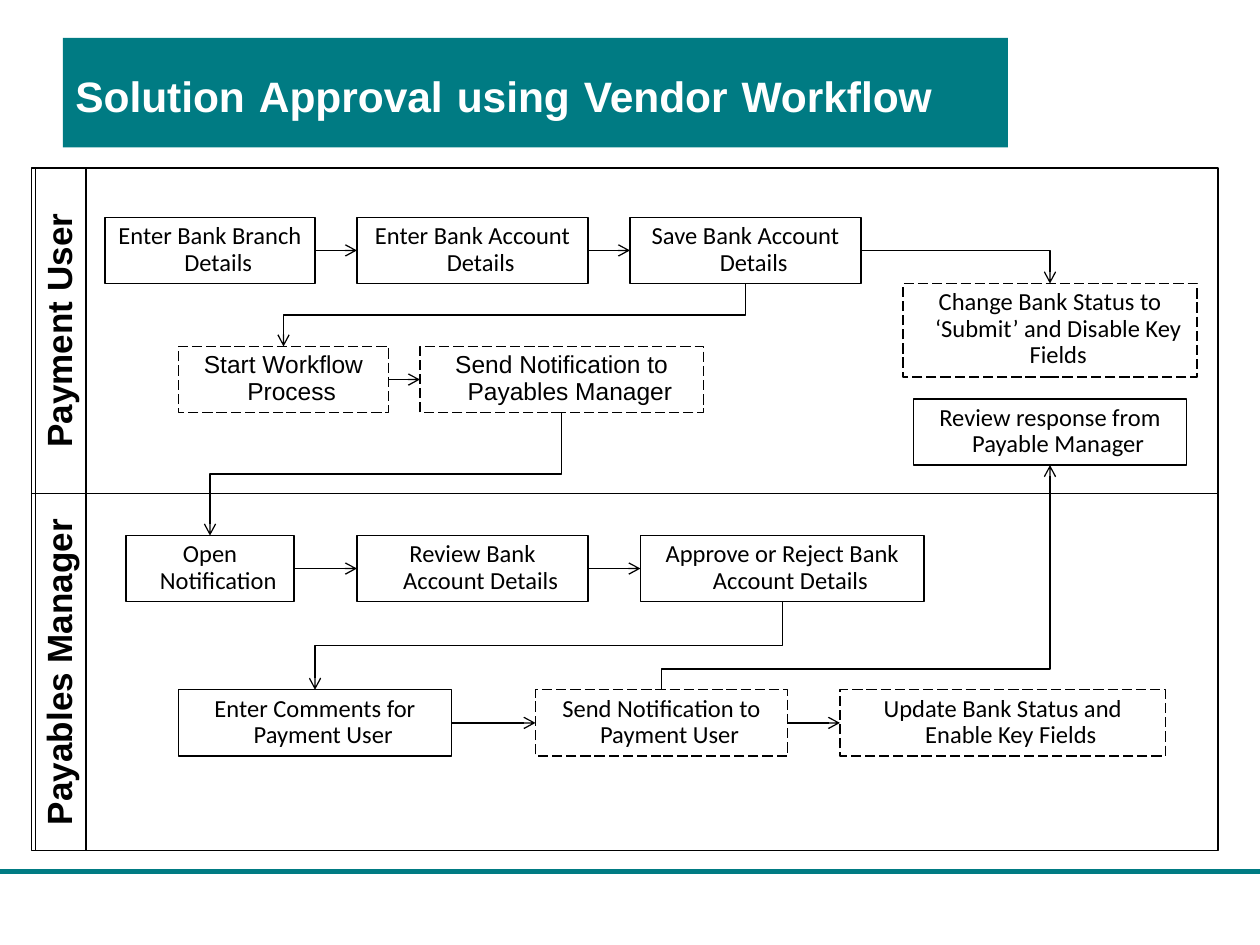
"""Builds a swimlane slide of a bank detail approval workflow."""
from dataclasses import dataclass
from typing import Optional

from lxml import etree
from pptx import Presentation
from pptx.dml.color import RGBColor
from pptx.enum.dml import MSO_LINE
from pptx.enum.shapes import MSO_CONNECTOR, MSO_SHAPE
from pptx.enum.text import MSO_ANCHOR, MSO_AUTO_SIZE, PP_ALIGN
from pptx.oxml.ns import qn
from pptx.util import Emu, Inches, Pt

RECT = MSO_SHAPE.RECTANGLE
STRAIGHT, ELBOW = MSO_CONNECTOR.STRAIGHT, MSO_CONNECTOR.ELBOW
DASH = MSO_LINE.LONG_DASH
CENTER, LEFT_ALIGN = PP_ALIGN.CENTER, PP_ALIGN.LEFT
MIDDLE, TOP_ANCHOR = MSO_ANCHOR.MIDDLE, MSO_ANCHOR.TOP
GROW = MSO_AUTO_SIZE.SHAPE_TO_FIT_TEXT
TOP, LEFT, BOTTOM, RIGHT = range(4)
COLS, ROWS = 120, 90
STEP_H, LABEL_H, LABEL_X = 6.3, 4.8, 5.8


@dataclass(frozen=True)
class Theme:
    teal: RGBColor = RGBColor(0x00, 0x7B, 0x83)
    ink: RGBColor = RGBColor(0, 0, 0)
    paper: RGBColor = RGBColor(255, 255, 255)
    head: str = "Arial"
    body: str = "Calibri"
    title: float = 24.3
    title_gap: float = 28.8
    lane: float = 20
    step: float = 14
    thin: float = 0.75
    rule: float = 3


@dataclass(frozen=True)
class Step:
    key: str
    text: str
    col: float
    row: float
    cols: float
    rows: float = STEP_H
    dashed: bool = False
    font: str = "Calibri"


@dataclass(frozen=True)
class Lane:
    text: str
    row: float
    rows: float


@dataclass(frozen=True)
class Bend:
    start: str
    start_side: int
    end: str
    end_side: int
    share: Optional[float] = 0.5


THEME = Theme()
ROW_1, ROW_2, ROW_3, ROW_4 = 20.7, 33, 51, 65.7
STEPS = [
    Step("branch", "Enter Bank Branch Details", 10, ROW_1, 20),
    Step("account", "Enter Bank Account Details", 34, ROW_1, 22),
    Step("save", "Save Bank Account Details", 60, ROW_1, 22),
    Step("start", "Start Workflow Process", 17, ROW_2, 20, dashed=True, font=THEME.head),
    Step("notify manager", "Send Notification to Payables Manager", 40, ROW_2, 27,
         dashed=True, font=THEME.head),
    Step("submit", "Change Bank Status to ‘Submit’ and Disable Key Fields", 86, 27, 28, 8.9, True),
    Step("response", "Review response from Payable Manager", 87, 38, 26),
    Step("open", "Open Notification", 12, ROW_3, 16),
    Step("review", "Review Bank Account Details", 34, ROW_3, 22),
    Step("decide", "Approve or Reject Bank Account Details", 61, ROW_3, 27),
    Step("comment", "Enter Comments for Payment User", 17, ROW_4, 26),
    Step("notify user", "Send Notification to Payment User", 51, ROW_4, 24, dashed=True),
    Step("update", "Update Bank Status and Enable Key Fields", 80, ROW_4, 31, dashed=True),
]
LANES = [Lane("Payment User", 16, 31), Lane("Payables Manager", 47, 34)]
CHAINS = [("branch", "account", "save"), ("start", "notify manager"),
          ("open", "review", "decide"), ("comment", "notify user", "update")]
BENDS = [
    Bend("save", BOTTOM, "start", TOP),
    Bend("save", RIGHT, "submit", TOP, None),
    Bend("notify manager", BOTTOM, "open", TOP),
    Bend("decide", BOTTOM, "comment", TOP),
    Bend("notify user", TOP, "response", BOTTOM, 0.093),
]


def unit(n: float) -> Emu:
    """Turn grid columns or rows into a length."""
    return Inches(n * 10 / COLS)


def add_rect(s, col: float, row: float, cols: float, rows: float, dashed: bool = False):
    """Draw an unfilled, thinly outlined rectangle."""
    sp = s.shapes.add_shape(RECT, unit(col), unit(row), unit(cols), unit(rows))
    sp.shadow.inherit = False
    sp.fill.background()
    sp.line.color.rgb = THEME.ink
    sp.line.width = Pt(THEME.thin)
    if dashed:
        sp.line.dash_style = DASH
    return sp


def write(sp, text: str, font: str, size: float, bold: bool = False) -> None:
    """Write centred text with a hanging indent."""
    tf = sp.text_frame
    tf.word_wrap = True
    tf.auto_size = GROW
    tf.vertical_anchor = TOP_ANCHOR
    p = tf.paragraphs[0]
    p.text = text
    p.alignment = CENTER
    p.line_spacing = 0.9
    pr = p._p.get_or_add_pPr()
    pr.set("marL", str(Inches(0.13)))
    pr.set("indent", str(-Inches(0.13)))
    p.font.name, p.font.size, p.font.bold = font, Pt(size), bold
    p.font.color.rgb = THEME.ink


def add_line(s, kind, x1: int, y1: int, x2: int, y2: int, color: RGBColor, width: float):
    """Draw a connector without shadow."""
    c = s.shapes.add_connector(kind, Emu(int(x1)), Emu(int(y1)), Emu(int(x2)), Emu(int(y2)))
    c.line.color.rgb = color
    c.line.width = Pt(width)
    etree.SubElement(c._element.spPr, qn("a:effectLst"))
    return c


def add_arrow(s, kind, x1: int, y1: int, x2: int, y2: int):
    """Draw a thin connector with an open arrowhead."""
    c = add_line(s, kind, x1, y1, x2, y2, THEME.ink, THEME.thin)
    etree.SubElement(c.line._get_or_add_ln(), qn("a:tailEnd"), type="arrow")
    return c


def side_point(sp, side: int) -> tuple[float, float]:
    """Give the middle of one side of a rectangle."""
    x = {LEFT: 0, RIGHT: 1}.get(side, 0.5)
    y = {TOP: 0, BOTTOM: 1}.get(side, 0.5)
    return sp.left + x * sp.width, sp.top + y * sp.height


def add_bend(s, boxes: dict, bend: Bend) -> None:
    """Draw an elbow arrow, turned a quarter when it leaves vertically."""
    x1, y1 = side_point(boxes[bend.start], bend.start_side)
    x2, y2 = side_point(boxes[bend.end], bend.end_side)
    if bend.share is None:
        c = add_arrow(s, ELBOW, x1, y1, x2, y2)
        c._element.spPr.find(qn("a:prstGeom")).set("prst", "bentConnector2")
        return
    mx, my, dx, dy = (x1 + x2) / 2, (y1 + y2) / 2, (x1 - x2) / 2, (y1 - y2) / 2
    c = add_arrow(s, ELBOW, mx + dy, my - dx, mx - dy, my + dx)
    c._element.spPr.find(qn("a:xfrm")).set("rot", str(90 * 60000))
    guides = c._element.spPr.find(qn("a:prstGeom")).get_or_add_avLst()
    etree.SubElement(guides, qn("a:gd"), name="adj1", fmla=f"val {round(bend.share * 100000)}")


def add_title(s, text: str) -> None:
    """Draw the title band, with wider gaps between its words."""
    sp = s.shapes.add_shape(RECT, Inches(0.5), Inches(0.3), Inches(7.5), Inches(0.87))
    sp.shadow.inherit = False
    sp.fill.solid()
    sp.fill.fore_color.rgb = THEME.teal
    sp.line.fill.background()
    tf = sp.text_frame
    tf.word_wrap = True
    tf.vertical_anchor = MIDDLE
    p = tf.paragraphs[0]
    p.alignment = LEFT_ALIGN
    p.font.name, p.font.bold = THEME.head, True
    p.font.color.rgb = THEME.paper
    for part in text.replace(" ", "| |").split("|"):
        r = p.add_run()
        r.text = part
        r.font.name, r.font.bold = THEME.head, True
        r.font.color.rgb = THEME.paper
        r.font.size = Pt(THEME.title_gap if part == " " else THEME.title)


def main() -> None:
    """Build and save the slide."""
    prs = Presentation()
    prs.slide_width, prs.slide_height = unit(COLS), unit(ROWS)
    s = prs.slides.add_slide(prs.slide_layouts[6])
    add_line(s, STRAIGHT, 0, unit(83), unit(COLS), unit(83), THEME.teal, THEME.rule)
    boxes = {}
    for step in STEPS:
        sp = add_rect(s, step.col, step.row, step.cols, step.rows, step.dashed)
        write(sp, step.text, step.font, THEME.step)
        boxes[step.key] = sp
    for lane in LANES:
        add_rect(s, 3, lane.row, 113, lane.rows)
        middle = lane.row + lane.rows / 2
        sp = add_rect(s, LABEL_X - lane.rows / 2, middle - LABEL_H / 2, lane.rows, LABEL_H)
        sp.rotation = 270
        write(sp, lane.text, THEME.head, THEME.lane, True)
    for chain in CHAINS:
        for a, b in zip(chain, chain[1:]):
            c = add_arrow(s, STRAIGHT, *side_point(boxes[a], RIGHT), *side_point(boxes[b], LEFT))
            c.begin_connect(boxes[a], RIGHT)
            c.end_connect(boxes[b], LEFT)
    for bend in BENDS:
        add_bend(s, boxes, bend)
    add_title(s, "Solution Approval using Vendor Workflow")
    prs.save("out.pptx")


if __name__ == "__main__":
    main()
